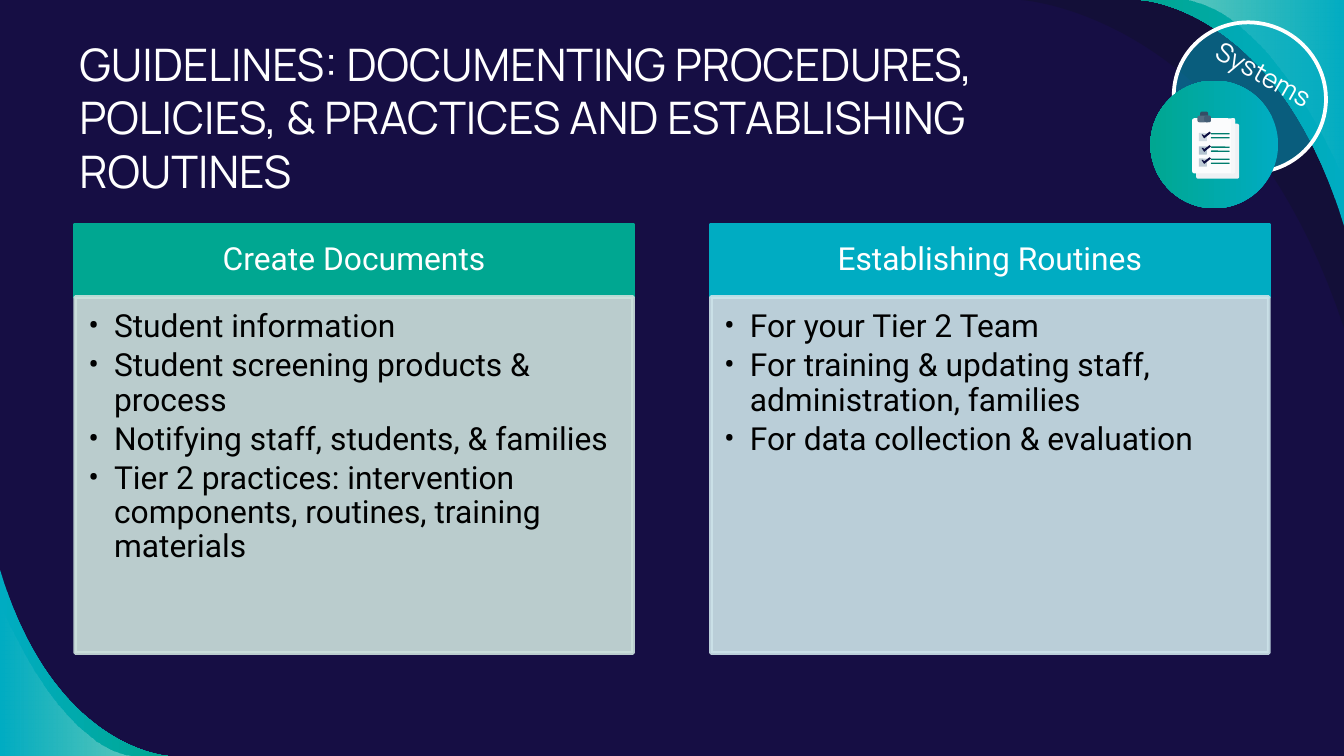
from dataclasses import dataclass

from lxml import etree
from pptx import Presentation, util as u
from pptx.dml import color
from pptx.enum import shapes as es, text as et
from pptx.oxml import ns
from pptx.shapes import autoshape as au
from pptx.slide import Slide

Point = tuple[float, float]
RECT = es.MSO_SHAPE.RECTANGLE
ROUND = es.MSO_SHAPE.ROUNDED_RECTANGLE
OVAL = es.MSO_SHAPE.OVAL
TEAL, CYAN, WHITE, NAVY = "00A791", "00ACC2", "FFFFFF", "160E44"
WIDE = 10
HIGH = WIDE * 9 / 16


@dataclass
class Box:
    x: float
    y: float
    w: float
    h: float
    fill: str
    kind: es.MSO_SHAPE = ROUND
    adj: float = 0.05


@dataclass
class Wave:
    curve: tuple[Point, Point, Point, Point]
    corner: Point
    fill: tuple[str, ...]
    alphas: tuple[int, ...]
    angle: int = 0


@dataclass
class Card:
    x: float
    head: str
    tint: str
    pale: str
    items: tuple[str, ...]


WAVES = (
    Wave(((1.25, HIGH), (1.25, HIGH), (0.4, 5.58), (0, 4.24)),
         (0, HIGH), (CYAN, TEAL), (100, 100)),
    Wave(((0, 4.5), (0, 4.5), (0.42, 5.56), (0.99, HIGH)),
         (0, HIGH), (WHITE, WHITE), (0, 36)),
    Wave(((WIDE, 2.44), (9.22, 0.08), (7.59, 0), (7.59, 0)),
         (WIDE, 0), ("12102F",), (54,)),
    Wave(((8.49, 0), (8.49, 0), (9.51, 0.05), (WIDE, 1.68)),
         (WIDE, 0), (CYAN, TEAL), (100, 100), 180),
    Wave(((WIDE, 1.35), (WIDE, 1.35), (9.49, 0.08), (8.8, 0)),
         (WIDE, 0), (WHITE, WHITE), (0, 36), 180),
)
CARDS = (
    Card(0.56, "Create Documents", TEAL, "CCE1DC", (
        "Student information",
        "Student screening products & process",
        "Notifying staff, students, & families",
        "Tier 2 practices: intervention components, routines, "
        "training materials")),
    Card(5.29, "Establishing Routines", CYAN, "CCE3E9", (
        "For your Tier 2 Team",
        "For training & updating staff, administration, families",
        "For data collection & evaluation")),
)
PAPER = (
    Box(8.93, 0.83, 0.06, 0.05, "344D65", adj=0.3),
    Box(8.9, 0.92, 0.32, 0.41, "EEF1F4"),
    Box(8.87, 0.88, 0.32, 0.41, "FBFCFD"),
    Box(9.16, 0.88, 0.03, 0.41, "F5F7F9", adj=0.3),
)
CLIP = (
    Box(8.91, 0.86, 0.1, 0.05, "546C81", adj=0.3),
    Box(8.96, 0.86, 0.05, 0.05, "435D74", adj=0.3),
)
ROWS = ((0.99, "D1DBE2"), (1.09, "B2C2CE"), (1.18, "BECBD5"))
TICK = ((0, 0.02), (0.01, 0.02), (0.02, 0.03), (0.06, 0),
        (0.07, 0.01), (0.02, 0.05))


def rgb(code: str) -> color.RGBColor:
    return color.RGBColor.from_string(code)


def assign(item: object, values: dict) -> None:
    for name, value in values.items():
        setattr(item, name, value)


def fade(shape: au.Shape, where: str, *alphas: int) -> None:
    for node, alpha in zip(shape.element.xpath(where), alphas):
        etree.SubElement(node, ns.qn("a:alpha"), val=str(alpha * 1000))


def paint(shape: au.Shape, code: str) -> None:
    shape.fill.solid()
    shape.fill.fore_color.rgb = rgb(code)
    shape.line.fill.background()
    shape.shadow.inherit = False


def blend(shape: au.Shape, codes: tuple[str, ...], angle: int) -> None:
    paint(shape, codes[0])
    shape.fill.gradient()
    shape.fill.gradient_angle = angle
    for stop, code in zip(shape.fill.gradient_stops, codes):
        stop.color.rgb = rgb(code)


def edge(shape: au.Shape, code: str) -> None:
    shape.line.color.rgb = rgb(code)
    shape.line.width = u.Pt(2)


def draw(slide: Slide, box: Box) -> au.Shape:
    shape = slide.shapes.add_shape(
        box.kind, *(u.Inches(v) for v in (box.x, box.y, box.w, box.h)))
    if box.kind == ROUND:
        shape.adjustments[0] = box.adj
    paint(shape, box.fill)
    return shape


def outline(slide: Slide, points: list[Point]) -> au.Shape:
    spots = [(u.Inches(x), u.Inches(y)) for x, y in points]
    pen = slide.shapes.build_freeform(*spots[0])
    pen.add_line_segments(spots[1:], close=True)
    return pen.convert_to_shape()


def bend(curve: tuple[Point, ...], steps: int = 40) -> list[Point]:
    spots = []
    for i in range(steps + 1):
        t = i / steps
        parts = ((1 - t) ** 3, 3 * t * (1 - t) ** 2,
                 3 * t * t * (1 - t), t ** 3)
        spots.append(tuple(sum(k * p[n] for k, p in zip(parts, curve))
                           for n in (0, 1)))
    return spots


def sweep(slide: Slide, wave: Wave) -> None:
    shape = outline(slide, bend(wave.curve) + [wave.corner])
    if len(wave.fill) == 1:
        paint(shape, wave.fill[0])
        fade(shape, "./p:spPr/a:solidFill/a:srgbClr", *wave.alphas)
    else:
        blend(shape, wave.fill, wave.angle)
        fade(shape, ".//a:gs/a:srgbClr", *wave.alphas)


def write(shape: au.Shape, lines: tuple[str, ...], look: dict, para: dict,
          pads: tuple[float, ...], mid: bool = False, dot: bool = False) -> None:
    frame = shape.text_frame
    sides = ("margin_left", "margin_top", "margin_right", "margin_bottom")
    assign(frame, dict(zip(sides, map(u.Inches, pads))))
    assign(frame, {
        "word_wrap": True, "auto_size": et.MSO_AUTO_SIZE.NONE,
        "vertical_anchor": et.MSO_ANCHOR.MIDDLE if mid else et.MSO_ANCHOR.TOP})
    frame.text = "\n".join(lines)
    for item in frame.paragraphs:
        assign(item, para)
        if dot:
            props = item._p.get_or_add_pPr()
            indent = u.Inches(0.19)
            props.set("marL", str(indent))
            props.set("indent", str(-indent))
            etree.SubElement(props, ns.qn("a:buFont"), typeface=look["name"])
            etree.SubElement(props, ns.qn("a:buChar"), char="•")
        for run in item.runs:
            assign(run.font, {k: v for k, v in look.items() if k != "code"})
            run.font.color.rgb = rgb(look["code"])


def panel(slide: Slide, card: Card) -> None:
    head = draw(slide, Box(card.x, 1.67, 4.15, 0.54, card.tint, RECT))
    edge(head, card.tint)
    look = {"name": "Roboto", "size": u.Pt(17), "code": WHITE}
    write(head, (card.head,), look,
          {"alignment": et.PP_ALIGN.CENTER, "line_spacing": 0.9},
          (0.13, 0.08, 0.13, 0.08), mid=True)
    body = draw(slide, Box(card.x, 2.21, 4.15, 2.65, card.pale, RECT))
    edge(body, card.pale)
    fade(body, "./p:spPr//a:srgbClr", 90, 90)
    write(body, card.items, look | {"code": "000000"},
          {"alignment": et.PP_ALIGN.LEFT, "line_spacing": 0.9,
           "space_after": u.Pt(2.55)},
          (0.1, 0.1, 0.13, 0.15), dot=True)


def badge(slide: Slide) -> None:
    ring = draw(slide, Box(8.73, 0.17, 1.14, 1.11, CYAN, OVAL))
    edge(ring, WHITE)
    fade(ring, "./p:spPr/a:solidFill/a:srgbClr", 50)
    label = slide.shapes.add_textbox(
        *map(u.Inches, (8.87, 0.43, 0.84, 0.64)))
    ring.rotation = label.rotation = 29.6
    write(label, ("Systems",),
          {"name": "Manrope", "size": u.Pt(14), "code": WHITE},
          {"alignment": et.PP_ALIGN.CENTER, "line_spacing": 0.9}, (0, 0, 0, 0))
    disc = draw(slide, Box(8.56, 0.6, 0.95, 0.95, CYAN, OVAL))
    blend(disc, (CYAN, TEAL), 180)


def sheet(slide: Slide) -> None:
    for box in PAPER:
        draw(slide, box)
    for top, tone in ROWS:
        draw(slide, Box(8.92, top, 0.06, 0.06, tone))
        for gap in (0, 0.03):
            draw(slide, Box(9.01, top + gap, 0.14, 0.01, "007D6D", adj=0.5))
        tick = outline(slide, [(8.94 + x, top - 0.01 + y) for x, y in TICK])
        paint(tick, "0D0F41")
    for box in CLIP:
        draw(slide, box)


def main() -> None:
    deck = Presentation()
    assign(deck, {"slide_width": u.Inches(WIDE),
                  "slide_height": u.Inches(HIGH)})
    slide = deck.slides.add_slide(deck.slide_layouts[5])
    slide.background.fill.solid()
    slide.background.fill.fore_color.rgb = rgb(NAVY)
    for wave in WAVES:
        sweep(slide, wave)
    title = slide.shapes.title
    assign(title, dict(zip(("left", "top", "width", "height"),
                           map(u.Inches, (0.49, 0.17, 8.14, 0.88)))))
    write(title, ("GUIDELINES: DOCUMENTING PROCEDURES, POLICIES, "
                  "& PRACTICES AND ESTABLISHING ROUTINES",),
          {"name": "Manrope", "size": u.Pt(24), "code": WHITE},
          {"alignment": et.PP_ALIGN.LEFT}, (0.1, 0.1, 0.1, 0.1))
    for card in CARDS:
        panel(slide, card)
    badge(slide)
    sheet(slide)
    deck.save("out.pptx")


if __name__ == "__main__":
    main()
